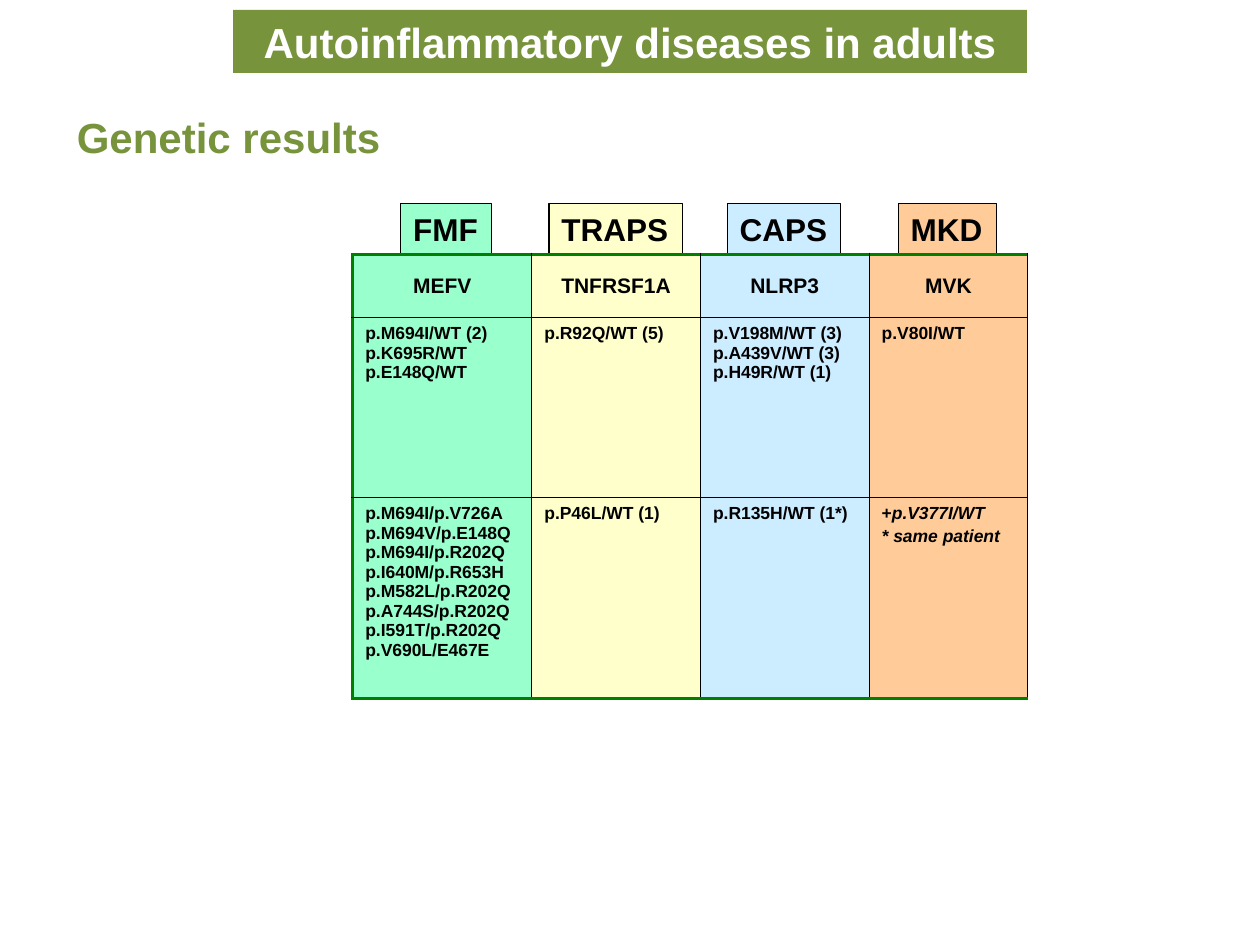
from lxml import etree
from pptx import Presentation
from pptx.dml.color import RGBColor
from pptx.enum.shapes import MSO_SHAPE
from pptx.enum.text import MSO_ANCHOR, PP_ALIGN
from pptx.oxml.ns import qn
from pptx.util import Cm, Pt

RECT = MSO_SHAPE.RECTANGLE
TOP, MIDDLE = MSO_ANCHOR.TOP, MSO_ANCHOR.MIDDLE
LEFT, CENTER = PP_ALIGN.LEFT, PP_ALIGN.CENTER
BLACK, WHITE, OLIVE, GREEN = "000000", "FFFFFF", "77933C", "008000"

TITLE = "Autoinflammatory diseases in adults"
HEADING = "Genetic results"
DISEASES = [
    {"name": "FMF", "left": 8.08, "width": 1.83, "col": 3.61, "fill": "99FFCC",
     "cells": [["MEFV"],
               ["p.M694I/WT (2)", "p.K695R/WT", "p.E148Q/WT"],
               ["p.M694I/p.V726A", "p.M694V/p.E148Q", "p.M694I/p.R202Q",
                "p.I640M/p.R653H", "p.M582L/p.R202Q", "p.A744S/p.R202Q",
                "p.I591T/p.R202Q", "p.V690L/E467E"]]},
    {"name": "TRAPS", "left": 11.07, "width": 2.69, "col": 3.4, "fill": "FFFFCC",
     "cells": [["TNFRSF1A"], ["p.R92Q/WT (5)"], ["p.P46L/WT (1)"]]},
    {"name": "CAPS", "left": 14.66, "width": 2.29, "col": 3.4, "fill": "CCECFF",
     "cells": [["NLRP3"],
               ["p.V198M/WT (3) p.A439V/WT (3)", "p.H49R/WT (1)"],
               ["p.R135H/WT (1*)"]]},
    {"name": "MKD", "left": 18.11, "width": 1.98, "col": 3.2, "fill": "FFCC99",
     "cells": [["MVK"], ["p.V80I/WT"], [("+", "p.V377I/WT"), ("", "* same patient")]]},
]
ROWS = [1.27, 3.63, 4.06]
TABLE_LEFT, TABLE_TOP = 7.11, 5.13
TAG_TOP, TAG_HEIGHT = 4.11, 1.02


def rgb(value):
    return RGBColor.from_string(value)


def add_run(p, text, size, color=BLACK, italic=False):
    r = p.add_run()
    r.text = text
    for name, value in {"name": "Arial", "size": Pt(size), "bold": True, "italic": italic}.items():
        setattr(r.font, name, value)
    r.font.color.rgb = rgb(color)


def write(tf, lines, size, color=BLACK, align=LEFT):
    for i, line in enumerate(lines):
        p = tf.paragraphs[0] if i == 0 else tf.add_paragraph()
        p.alignment = align
        if isinstance(line, str):
            add_run(p, line, size, color)
            continue
        plain, slanted = line
        p.space_before = Pt(0.2 * size)
        if plain:
            add_run(p, plain, size, color)
        add_run(p, slanted, size, color, italic=True)


def add_box(s, box, text, size, fill, line=None, color=BLACK, align=LEFT, wrap=True):
    sp = s.shapes.add_shape(RECT, *map(Cm, box))
    sp.shadow.inherit = False
    sp.fill.solid()
    sp.fill.fore_color.rgb = rgb(fill)
    if line:
        sp.line.color.rgb = rgb(line)
        sp.line.width = Pt(0.75)
    else:
        sp.line.fill.background()
    sp.text_frame.word_wrap = wrap
    sp.text_frame.vertical_anchor = TOP
    write(sp.text_frame, [text], size, color, align)


def set_borders(cell, borders):
    tcPr = cell._tc.get_or_add_tcPr()
    for i, (side, (color, width)) in enumerate(borders.items()):
        ln = etree.Element(qn("a:ln" + side), w=str(Pt(width)))
        fill = etree.SubElement(ln, qn("a:solidFill"))
        etree.SubElement(fill, qn("a:srgbClr"), val=color)
        tcPr.insert(i, ln)


def add_gene_table(s):
    width = sum(d["col"] for d in DISEASES)
    table = s.shapes.add_table(len(ROWS), len(DISEASES), Cm(TABLE_LEFT), Cm(TABLE_TOP),
                               Cm(width), Cm(sum(ROWS))).table
    table.first_row = table.horz_banding = False
    for row, height in zip(table.rows, ROWS):
        row.height = Cm(height)
    thin, thick = (BLACK, 0.75), (GREEN, 2)
    last = len(ROWS) - 1
    for j, d in enumerate(DISEASES):
        table.columns[j].width = Cm(d["col"])
        for i, lines in enumerate(d["cells"]):
            cell = table.cell(i, j)
            cell.fill.solid()
            cell.fill.fore_color.rgb = rgb(d["fill"])
            size, align, anchor = (12, CENTER, MIDDLE) if i == 0 else (10, LEFT, TOP)
            cell.vertical_anchor = anchor
            write(cell.text_frame, lines, size, align=align)
            set_borders(cell, {"L": thick if j == 0 else thin, "R": thin,
                               "T": thick if i == 0 else thin,
                               "B": thick if i == last else thin})


def main():
    prs = Presentation()
    prs.slide_width, prs.slide_height = Cm(25.4), Cm(19.05)
    s = prs.slides.add_slide(prs.slide_layouts[6])
    heading = s.shapes.add_textbox(Cm(1.3), Cm(2.13), Cm(7.01), Cm(1.27))
    heading.text_frame.word_wrap = True
    write(heading.text_frame, [HEADING], 24, OLIVE)
    for d in DISEASES:
        add_box(s, (d["left"], TAG_TOP, d["width"], TAG_HEIGHT), d["name"], 18,
                d["fill"], line=BLACK, wrap=False)
    add_gene_table(s)
    add_box(s, (4.7, 0.2, 16, 1.27), TITLE, 24, OLIVE, color=WHITE, align=CENTER)
    prs.save("out.pptx")


if __name__ == "__main__":
    main()
